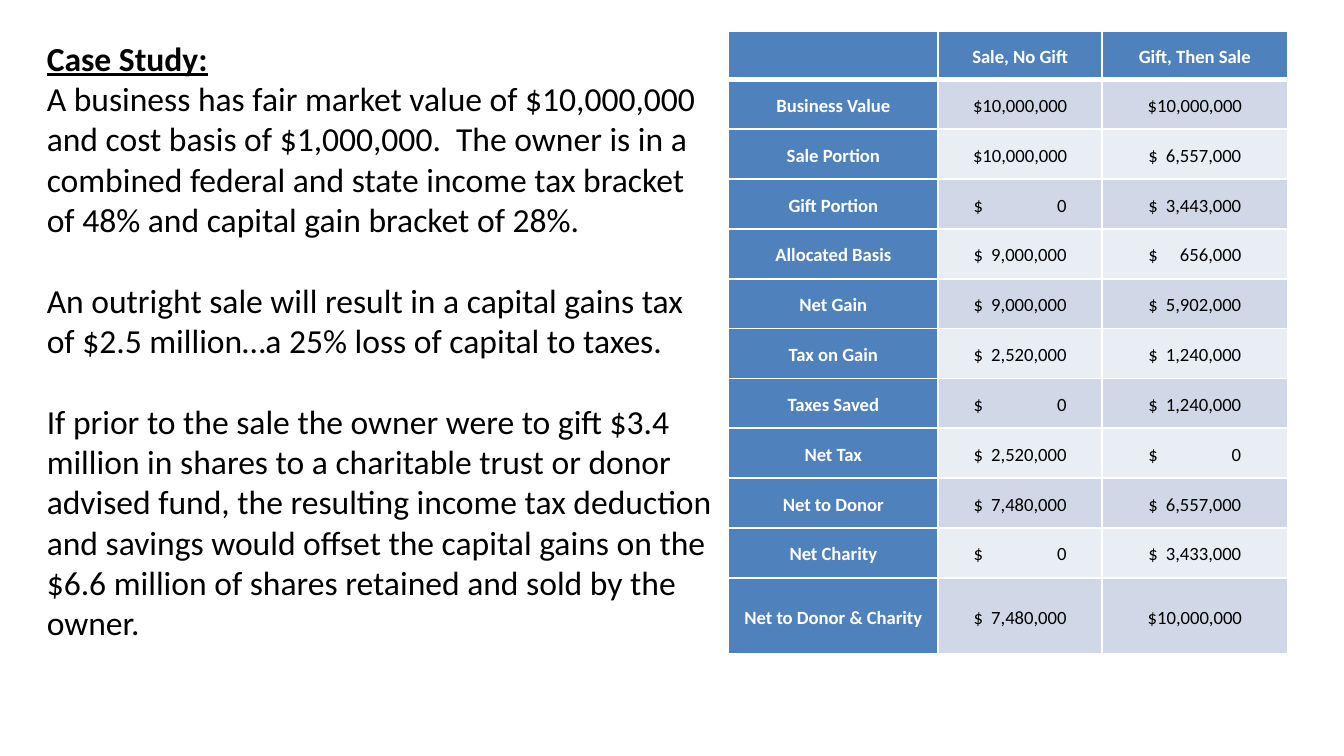
from dataclasses import dataclass
from pptx import Presentation
from pptx.dml.color import RGBColor
from pptx.enum.shapes import MSO_SHAPE
from pptx.enum.text import MSO_ANCHOR, PP_ALIGN
from pptx.oxml.ns import qn
from pptx.util import Inches, Pt
from lxml.etree import SubElement


@dataclass(frozen=True)
class Theme:
    font: str = "Calibri"
    body: Pt = Pt(18)
    small: Pt = Pt(10)
    gap: Pt = Pt(21.6)
    ink: RGBColor = RGBColor(0, 0, 0)
    white: RGBColor = RGBColor(255, 255, 255)
    head: RGBColor = RGBColor.from_string("4F81BD")
    bands: tuple = (RGBColor.from_string("D0D8E8"), RGBColor.from_string("E9EDF4"))
    thin: Pt = Pt(1)
    thick: Pt = Pt(3)
    pad: Inches = Inches(0.07)
    money: Inches = Inches(0.69)  # width of a full amount


THEME = Theme()
WIDTH = Inches(10)
HEIGHT = WIDTH * 9 // 16

STORY = [
    # text, space before
    ("A business has fair market value of $10,000,000 and cost basis of $1,000,000.  "
     "The owner is in a combined federal and state income tax bracket of 48% and "
     "capital gain bracket of 28%.", 0),
    ("An outright sale will result in a capital gains tax of $2.5 million…a 25% loss "
     "of capital to taxes.", THEME.gap),
    ("If prior to the sale the owner were to gift $3.4 million in shares to a "
     "charitable trust or donor advised fund, the resulting income tax deduction and "
     "savings would offset the capital gains on the $6.6 million of shares retained "
     "and sold by the owner.", THEME.gap),
]

ROWS = [
    ("", "Sale, No Gift", "Gift, Then Sale"),
    ("Business Value", 10_000_000, 10_000_000),
    ("Sale Portion", 10_000_000, 6_557_000),
    ("Gift Portion", 0, 3_443_000),
    ("Allocated Basis", 9_000_000, 656_000),
    ("Net Gain", 9_000_000, 5_902_000),
    ("Tax on Gain", 2_520_000, 1_240_000),
    ("Taxes Saved", 0, 1_240_000),
    ("Net Tax", 2_520_000, 0),
    ("Net to Donor", 7_480_000, 6_557_000),
    ("Net Charity", 0, 3_433_000),
    ("Net to Donor & Charity", 7_480_000, 10_000_000),
]


def wide(share):
    """Percent of the slide's width."""
    return int(WIDTH * share / 100)


def high(share):
    """Percent of the slide's height."""
    return int(HEIGHT * share / 100)


def style(item, **values):
    for name, value in values.items():
        setattr(item, name, value)


def write(para, text, size, color, bold=False, line=False):
    run = para.add_run()
    run.text = text
    style(run.font, name=THEME.font, size=size, bold=bold, underline=line)
    run.font.color.rgb = color


def edge(cell, top, base):
    """Draw white borders; they come before the fill in the cell's properties."""
    props = cell._tc.get_or_add_tcPr()
    widths = {"lnL": THEME.thin, "lnR": THEME.thin, "lnT": top, "lnB": base}
    for place, (tag, width) in enumerate(widths.items()):
        line = SubElement(props, qn(f"a:{tag}"), w=str(width))
        fill = SubElement(line, qn("a:solidFill"))
        SubElement(fill, qn("a:srgbClr"), val=str(THEME.white))
        props.insert(place, line)


def amount(cell, para, value, width):
    """Centre a full amount; set a short one flush right with its sign at left."""
    if value >= 10_000_000:
        return f"${value:,}"
    cell.margin_left = int((width - THEME.money) / 2)
    para.alignment = PP_ALIGN.LEFT
    tabs = SubElement(para._p.get_or_add_pPr(), qn("a:tabLst"))
    SubElement(tabs, qn("a:tab"), pos=str(THEME.money), algn="r")
    return f"$\t{value:,}"


def fill_cell(cell, value, row, col, width):
    label = row == 0 or col == 0
    cell.fill.solid()
    cell.fill.fore_color.rgb = THEME.head if label else THEME.bands[(row - 1) % 2]
    edge(cell, THEME.thick if row == 1 else THEME.thin,
         THEME.thick if row == 0 else THEME.thin)
    style(cell, margin_left=THEME.pad, margin_right=THEME.pad, margin_top=0,
          margin_bottom=0, vertical_anchor=MSO_ANCHOR.MIDDLE)
    para = cell.text_frame.paragraphs[0]
    style(para, alignment=PP_ALIGN.CENTER, line_spacing=1.15)
    text = value if label else amount(cell, para, value, width)
    if text:
        write(para, text, THEME.small, THEME.white if label else THEME.ink, label)


def add_grid(slide):
    cols = [wide(share) for share in (15.6, 12.2, 13.8)]
    rows = [high(share) for share in [6.4] + [6.6] * 10 + [10.1]]
    table = slide.shapes.add_table(len(rows), len(cols), wide(54.2), high(4.1),
                                   sum(cols), sum(rows)).table
    style(table, first_row=False, horz_banding=False)
    for col, width in enumerate(cols):
        table.columns[col].width = width
    for row, height in enumerate(rows):
        table.rows[row].height = height
        for col, value in enumerate(ROWS[row]):
            fill_cell(table.cell(row, col), value, row, col, cols[col])


def add_story(slide):
    box = slide.shapes.add_shape(MSO_SHAPE.RECTANGLE, wide(2.5), high(4.1),
                                 wide(51.7), high(82.5))
    box.shadow.inherit = False
    box.fill.solid()
    box.fill.fore_color.rgb = THEME.white
    box.line.fill.background()
    frame = box.text_frame
    style(frame, word_wrap=True, vertical_anchor=MSO_ANCHOR.TOP)
    title = frame.paragraphs[0]
    title.alignment = PP_ALIGN.LEFT
    write(title, "Case Study:", THEME.body, THEME.ink, bold=True, line=True)
    for text, space in STORY:
        para = frame.add_paragraph()
        style(para, alignment=PP_ALIGN.LEFT, space_before=space)
        write(para, text, THEME.body, THEME.ink)


def main():
    deck = Presentation()
    style(deck, slide_width=WIDTH, slide_height=HEIGHT)
    slide = deck.slides.add_slide(deck.slide_layouts[6])
    # Comparison table on the right
    add_grid(slide)
    # Case text on the left
    add_story(slide)
    deck.save("out.pptx")


if __name__ == "__main__":
    main()
